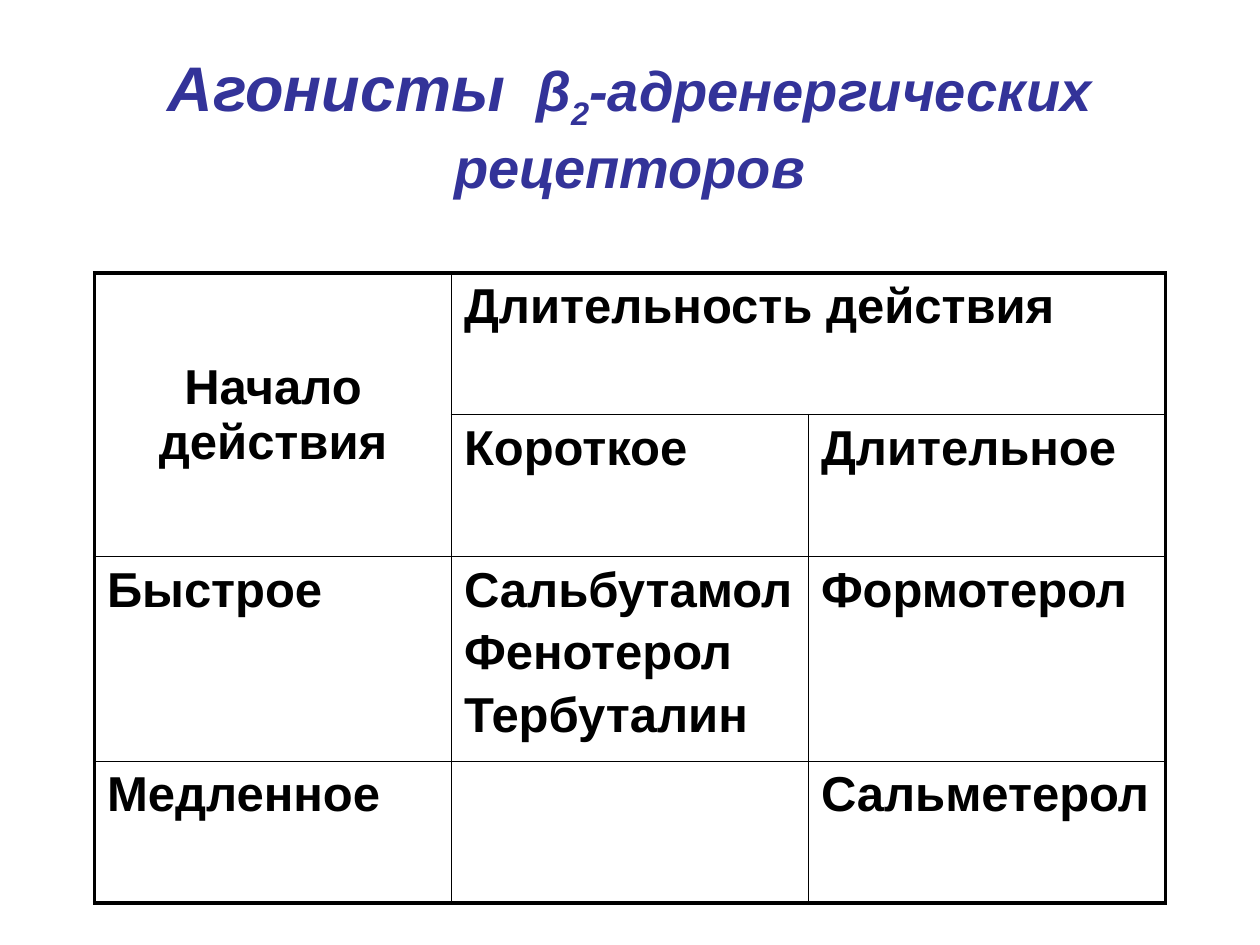
import pptx
import pptx.util
import pptx.dml.color
import pptx.enum.text
import pptx.oxml
import pptx.oxml.ns

Pt = pptx.util.Pt
CENTER = pptx.enum.text.PP_ALIGN.CENTER
MIDDLE = pptx.enum.text.MSO_ANCHOR.MIDDLE


def style(font, size, color, italic=False):
    font.name = "Arial"
    font.size = Pt(size)
    font.bold = True
    font.italic = italic
    font.color.rgb = pptx.dml.color.RGBColor.from_string(color)


def set_borders(cell, widths):
    """Draw black cell borders; widths are left, right, top, bottom in points."""
    properties = cell._tc.get_or_add_tcPr()
    for position, (side, width) in enumerate(zip("LRTB", widths)):
        properties.insert(position, pptx.oxml.parse_xml(
            f'<a:ln{side} {pptx.oxml.ns.nsdecls("a")} w="{Pt(width)}">'
            f'<a:solidFill><a:srgbClr val="000000"/></a:solidFill></a:ln{side}>'))


presentation = pptx.Presentation()
presentation.slide_width = Pt(720)
presentation.slide_height = Pt(540)
slide = presentation.slides.add_slide(presentation.slide_layouts[6])

# Title, with a subscript and a wider gap after the first word
title = slide.shapes.add_textbox(Pt(54), Pt(26), Pt(612), Pt(90)).text_frame
title.word_wrap = True
title.vertical_anchor = MIDDLE
heading = title.paragraphs[0]
heading.alignment = CENTER
for text, size, attributes in [
    ("Агонисты", 36, {}),
    (" ", 32, {"spc": "900"}),
    ("β", 32, {}),
    ("2", 32, {"baseline": "-25000"}),
    ("-адренергических рецепторов", 32, {}),
]:
    run = heading.add_run()
    run.text = text
    style(run.font, size, "333399", italic=True)
    for name, value in attributes.items():
        run._r.get_or_add_rPr().set(name, value)

# Table of agonists by onset and duration of action
agonists = [
    ["Начало действия", "Длительность действия", ""],
    ["", "Короткое", "Длительное"],
    ["Быстрое", "Сальбутамол\nФенотерол\nТербуталин", "Формотерол"],
    ["Медленное", "", "Сальметерол"],
]
row_heights = [81, 81, 112, 81]
table = slide.shapes.add_table(
    4, 3, Pt(54), Pt(156), Pt(612), Pt(sum(row_heights))).table
table.first_row = False
table.horz_banding = False
for column in table.columns:
    column.width = Pt(204)
for row, height in zip(table.rows, row_heights):
    row.height = Pt(height)
table.cell(0, 0).merge(table.cell(1, 0))
table.cell(0, 1).merge(table.cell(0, 2))

for r, texts in enumerate(agonists):
    for c, text in enumerate(texts):
        cell = table.cell(r, c)
        cell.fill.background()
        at_edge = [c == 0, c + cell.span_width >= 3,
                   r == 0, r + cell.span_height >= 4]
        set_borders(cell, [2.25 if edge else 1 for edge in at_edge])
        if cell.is_spanned:
            continue
        cell.text_frame.text = text
        for index, paragraph in enumerate(cell.text_frame.paragraphs):
            style(paragraph.font, 28, "000000")
            if index:
                paragraph.space_before = Pt(4.5)
            for run in paragraph.runs:
                style(run.font, 28, "000000")

# Row heading spanning both header rows is centred
onset = table.cell(0, 0)
onset.vertical_anchor = MIDDLE
onset.text_frame.paragraphs[0].alignment = CENTER

presentation.save("out.pptx")
